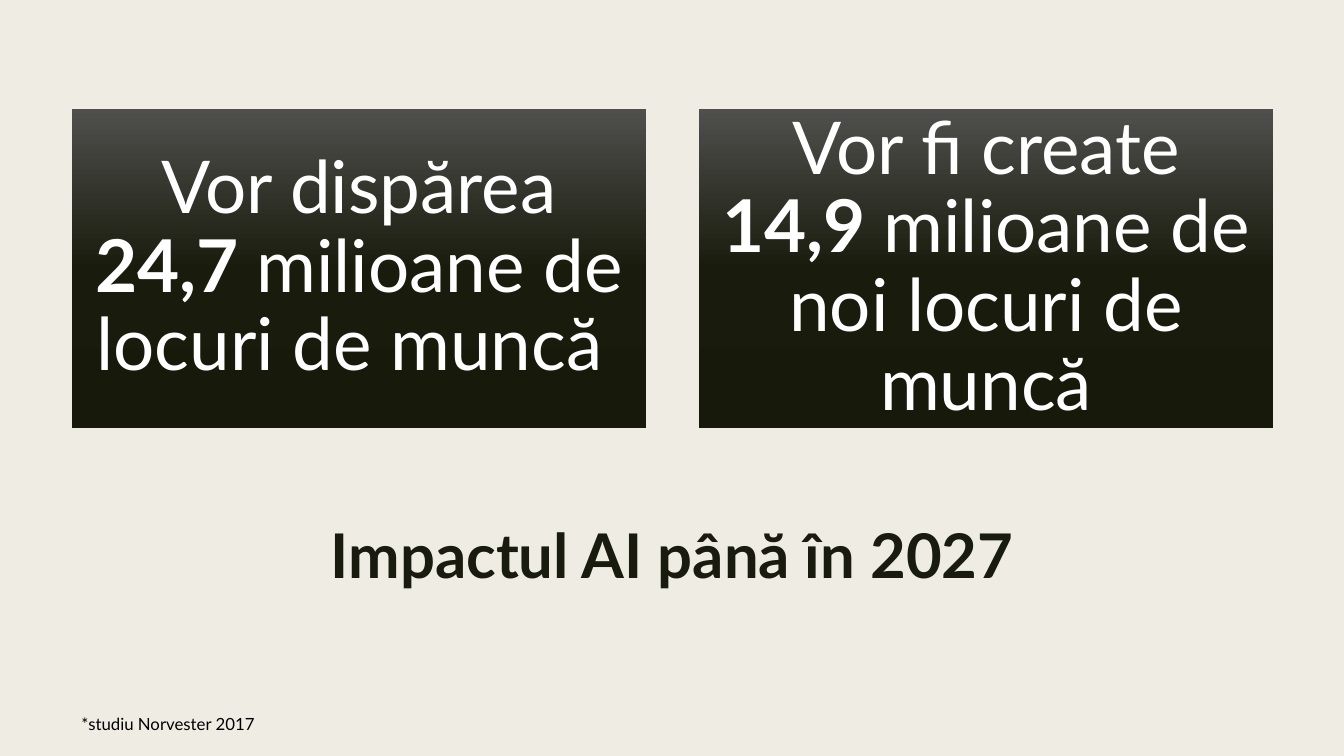
from copy import deepcopy
from pptx import Presentation, util as u
from pptx.dml.color import RGBColor
from pptx.enum import shapes, text

CREAM = RGBColor(0xEF, 0xED, 0xE3)
INK = RGBColor(0x19, 0x1B, 0x0E)
WHITE = RGBColor(255, 255, 255)
BLACK = RGBColor(0, 0, 0)
SHADES = [(0, RGBColor(0x4F, 0x4F, 0x4D)),
          (0.5, RGBColor(0x19, 0x1C, 0x0D)),
          (1, RGBColor(0x17, 0x19, 0x0B))]
FONT = "Lato"
LEFT, WIDTH, GAP = 0.71, 11.92, 0.52
CARDS = [("Vor dispărea ", "24,7 ", "milioane de locuri de muncă "),
         ("Vor fi create ", "14,9 ", "milioane de noi locuri de muncă")]


def style(par, size, color, bold=False):
    font = par.font
    font.name, font.size, font.bold = FONT, u.Pt(size), bold
    font.color.rgb = color


def place(shape, box):
    shape.left, shape.top, shape.width, shape.height = map(u.Inches, box)


def shade(shape):
    """Fill from top to bottom with the three card shades."""
    fill = shape.fill
    fill.gradient()
    fill.gradient_angle = 270
    first = shape._element.spPr.xpath(".//a:gs")[0]
    first.addnext(deepcopy(first))
    for stop, (pos, color) in zip(fill.gradient_stops, SHADES):
        stop.position = pos
        stop.color.rgb = color


def add_card(slide, box, parts):
    card = slide.shapes.add_shape(shapes.MSO_SHAPE.RECTANGLE, *map(u.Inches, box))
    card.shadow.inherit = False
    card.line.fill.background()
    shade(card)
    frame = card.text_frame
    frame.word_wrap = True
    frame.vertical_anchor = text.MSO_ANCHOR.MIDDLE
    frame.margin_left = frame.margin_right = u.Inches(0.22)
    frame.margin_top = frame.margin_bottom = u.Inches(0.22)
    par = frame.paragraphs[0]
    par.alignment = text.PP_ALIGN.CENTER
    par.line_spacing = 0.9
    style(par, 52, WHITE)
    before, count, after = parts
    for words in (before, count, after):
        run = par.add_run()
        run.text = words
        if words == count:
            run.font.bold = True


def add_cards(slide, box):
    """Share the box out in equal columns."""
    left, top, width, height = box
    col = (width - GAP * (len(CARDS) - 1)) / len(CARDS)
    for i, parts in enumerate(CARDS):
        add_card(slide, (left + i * (col + GAP), top, col, height), parts)


def set_title(slide, box):
    title = slide.shapes.title
    place(title, box)
    frame = title.text_frame
    frame.text = "Impactul AI până în 2027"
    frame.word_wrap = True
    frame.auto_size = text.MSO_AUTO_SIZE.NONE
    frame.vertical_anchor = text.MSO_ANCHOR.TOP
    par = frame.paragraphs[0]
    par.alignment = text.PP_ALIGN.CENTER
    par.line_spacing = 0.89
    style(par, 44, INK, True)


def add_note(slide, box):
    frame = slide.shapes.add_textbox(*map(u.Inches, box)).text_frame
    frame.word_wrap = True
    frame.vertical_anchor = text.MSO_ANCHOR.MIDDLE
    par = frame.paragraphs[0]
    par.text = "*studiu Norvester 2017"
    style(par, 12, BLACK)


def main():
    deck = Presentation()
    deck.slide_width, deck.slide_height = u.Inches(13.33), u.Inches(7.5)
    slide = deck.slides.add_slide(deck.slide_layouts[5])
    back = slide.background.fill
    back.solid()
    back.fore_color.rgb = CREAM
    set_title(slide, (LEFT, 5.17, WIDTH, 1.62))
    add_cards(slide, (LEFT, 1.08, WIDTH, 3.17))
    add_note(slide, (LEFT, 7.05, 2.87, 0.27))
    deck.save("out.pptx")


if __name__ == "__main__":
    main()
